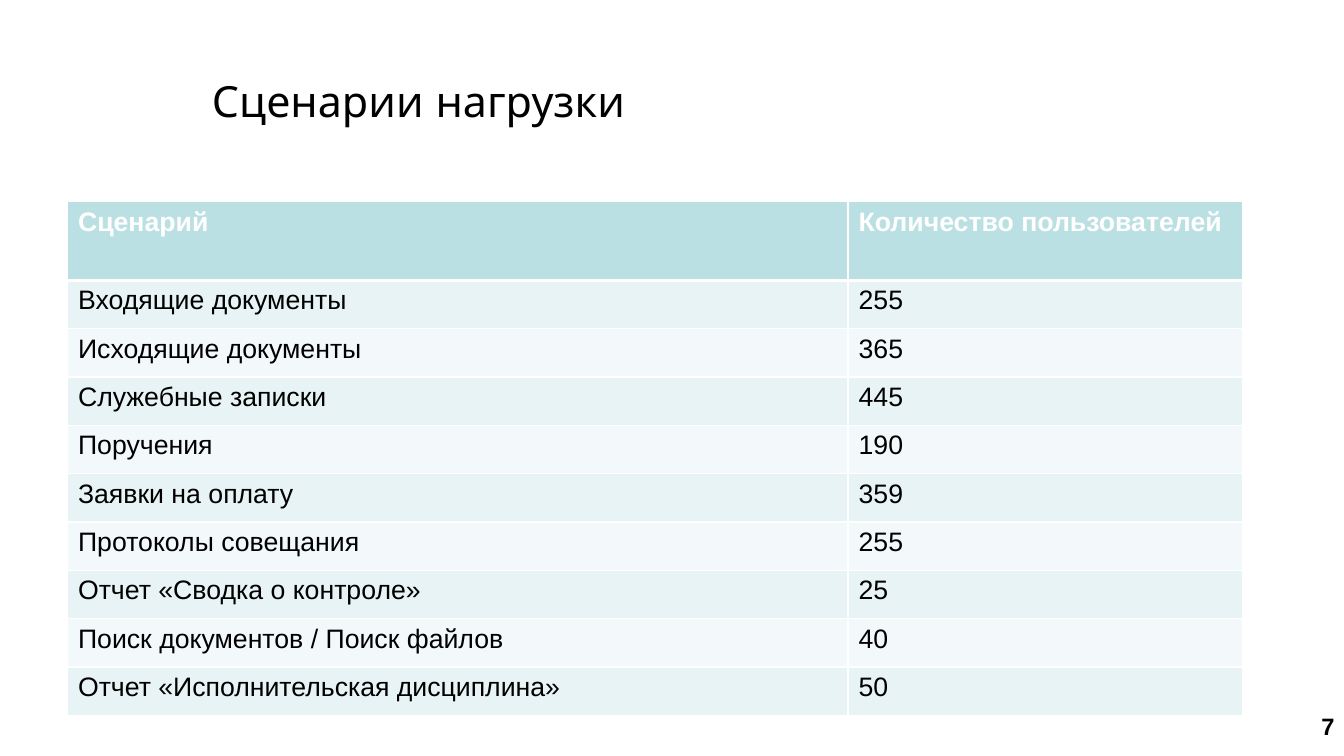
from lxml.etree import SubElement
from pptx import Presentation
from pptx.dml.color import RGBColor
from pptx.enum.text import MSO_ANCHOR as Anchor, PP_ALIGN as Align
from pptx.oxml import parse_xml
from pptx.oxml.ns import nsdecls, qn
from pptx.util import Pt

COLORS = {
    "text": "000000",
    "white": "FFFFFF",
    "header": "BBE0E3",
    "odd_row": "E7F3F4",
    "even_row": "F3F9FA",
}
HEADINGS = ("Сценарий", "Количество пользователей")
SCENARIOS = [
    ("Входящие документы", 255),
    ("Исходящие документы", 365),
    ("Служебные записки", 445),
    ("Поручения", 190),
    ("Заявки на оплату", 359),
    ("Протоколы совещания", 255),
    ("Отчет «Сводка о контроле»", 25),
    ("Поиск документов / Поиск файлов", 40),
    ("Отчет «Исполнительская дисциплина»", 50),
]
HEADER_HEIGHT = 53.2
SCENARIO_SHARE = 0.664


def format_runs(paragraph, name, size, color, bold=False):
    """Give every run of the paragraph its font, size and colour."""
    for run in paragraph.runs:
        run.font.name = name
        run.font.size = Pt(size)
        run.font.bold = bold
        run.font.color.rgb = RGBColor.from_string(COLORS[color])


def add_text(slide, box, text, anchor):
    """Add a wrapping text box and return its only paragraph."""
    text_frame = slide.shapes.add_textbox(*map(Pt, box)).text_frame
    text_frame.word_wrap = True
    text_frame.vertical_anchor = anchor
    text_frame.text = text
    return text_frame.paragraphs[0]


def add_title(slide, box):
    """Place the slide title, centred vertically in its box."""
    paragraph = add_text(slide, box, "Сценарии нагрузки", Anchor.MIDDLE)
    format_runs(paragraph, "Quicksand", 29, "text")


def add_page_number(slide, box):
    """Place the page number against the right edge of its box."""
    paragraph = add_text(slide, box, "7", Anchor.TOP)
    paragraph.alignment = Align.RIGHT
    paragraph.line_spacing = 1.1
    format_runs(paragraph, "Arial", 16, "text", bold=True)


def set_borders(cell, widths):
    """Draw white cell borders with the given widths by side."""
    properties = cell._tc.get_or_add_tcPr()
    for index, (side, width) in enumerate(widths.items()):
        line = parse_xml(f'<a:ln{side} {nsdecls("a")} w="{Pt(width)}"/>')
        fill = SubElement(line, qn("a:solidFill"))
        SubElement(fill, qn("a:srgbClr"), val=COLORS["white"])
        properties.insert(index, line)


def add_scenario_table(slide, box):
    """Fill the box with the table of scenarios and user counts."""
    left, top, width, height = box
    rows = [HEADINGS, *SCENARIOS]
    table = slide.shapes.add_table(len(rows), len(HEADINGS), *map(Pt, box)).table
    table.columns[0].width = Pt(width * SCENARIO_SHARE)
    table.columns[1].width = Pt(width * (1 - SCENARIO_SHARE))
    for row_index, values in enumerate(rows):
        is_header = row_index == 0
        body_height = (height - HEADER_HEIGHT) / len(SCENARIOS)
        table.rows[row_index].height = Pt(HEADER_HEIGHT if is_header else body_height)
        row_color = "header" if is_header else "odd_row" if row_index % 2 else "even_row"
        borders = {
            "L": 1,
            "R": 1,
            "T": 3 if row_index == 1 else 1,
            "B": 3 if is_header else 1,
        }
        for column_index, value in enumerate(values):
            cell = table.cell(row_index, column_index)
            cell.text_frame.text = str(value)
            text_color = "white" if is_header else "text"
            format_runs(cell.text_frame.paragraphs[0], "Arial", 18, text_color, is_header)
            cell.fill.solid()
            cell.fill.fore_color.rgb = RGBColor.from_string(COLORS[row_color])
            set_borders(cell, borders)


def main():
    """Build the slide and save the presentation."""
    presentation = Presentation()
    presentation.slide_width = Pt(907.2)
    presentation.slide_height = Pt(510.5)
    slide = presentation.slides.add_slide(presentation.slide_layouts[6])
    add_page_number(slide, (835.2, 475.2, 72.7, 28))
    add_title(slide, (136, 27.4, 422, 80.6))
    add_scenario_table(slide, (45.5, 136.2, 793.5, 347))
    presentation.save("out.pptx")


if __name__ == "__main__":
    main()
